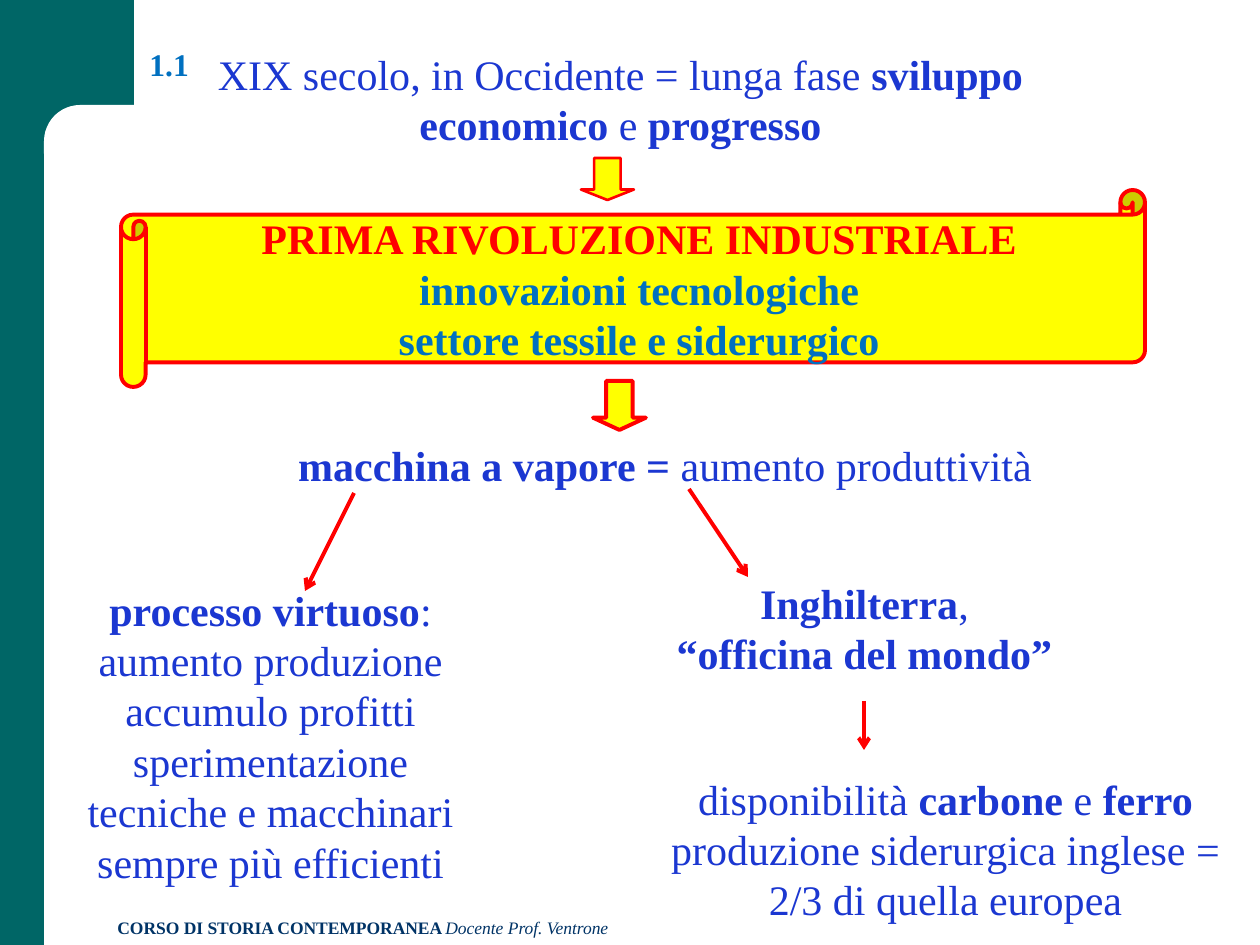
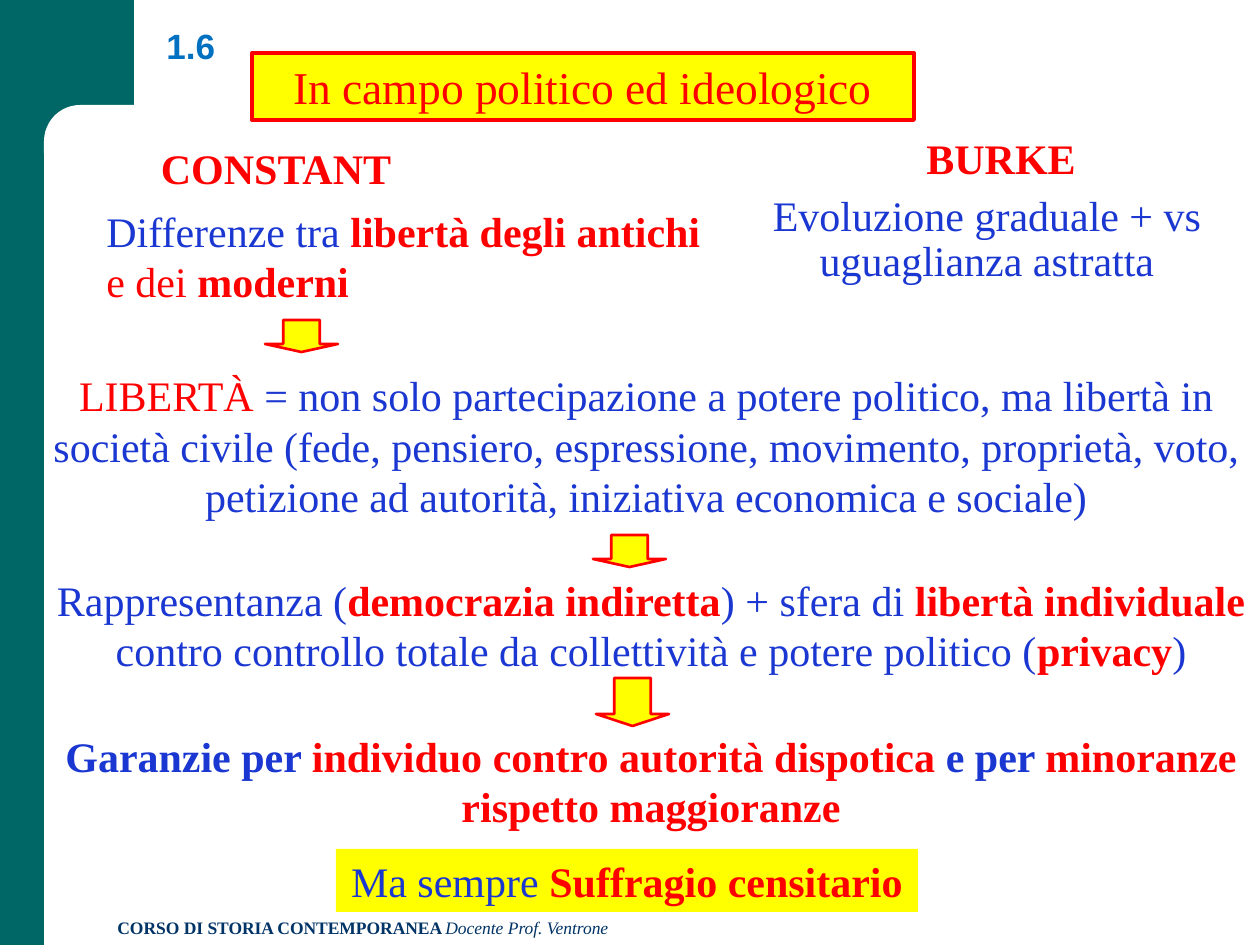
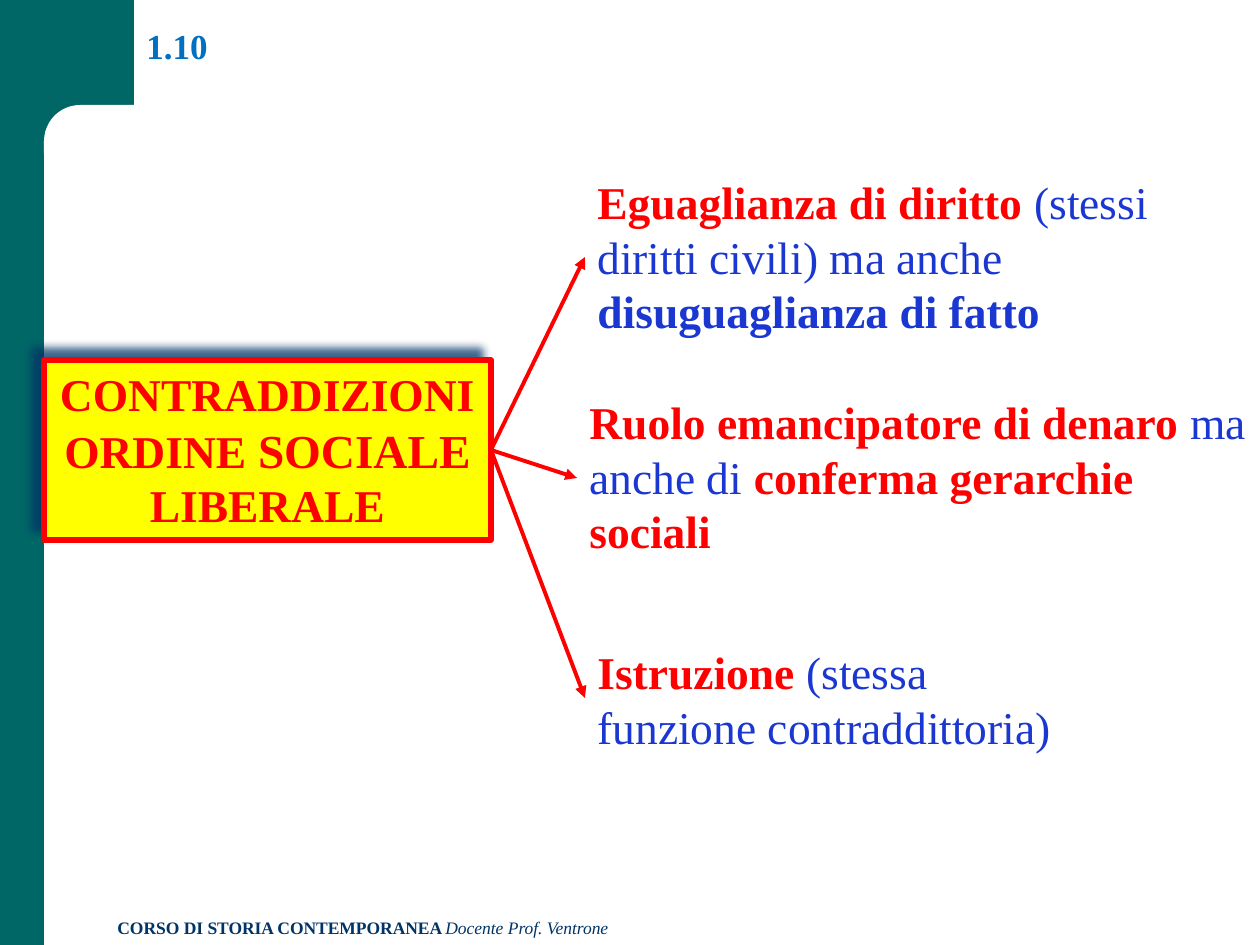
from dataclasses import dataclass

from lxml.etree import SubElement
from pptx import Presentation
from pptx.dml.color import RGBColor as Rgb
from pptx.enum.shapes import MSO_CONNECTOR as Connector, MSO_SHAPE as Shape
from pptx.enum.text import MSO_ANCHOR as Anchor, PP_ALIGN as Align
from pptx.oxml.ns import qn
from pptx.util import Pt

SCALE = 914400 / 126


@dataclass(frozen=True)
class Theme:
    band: Rgb = Rgb(0x00, 0x66, 0x66)
    white: Rgb = Rgb(0xFF, 0xFF, 0xFF)
    navy: Rgb = Rgb(0x00, 0x33, 0x66)
    blue: Rgb = Rgb(0x1B, 0x37, 0xD1)
    sky: Rgb = Rgb(0x00, 0x70, 0xC0)
    red: Rgb = Rgb(0xFF, 0x00, 0x00)
    yellow: Rgb = Rgb(0xFF, 0xFF, 0x00)
    serif: str = "Times New Roman"
    sans: str = "Arial"
    footer: int = 10
    first_number: int = 18
    number: int = 20
    body: int = 24
    large: int = 26
    emphasis: int = 27


T = Theme()


def place(slide, box, paragraphs=(), size=T.body, align=Align.CENTER, anchor=Anchor.TOP,
          kind=None, fill=T.yellow, line=None, width=2.25, face=T.serif, spacing=None):
    area = [round(n * SCALE) for n in box]
    if kind is None:
        shape = slide.shapes.add_textbox(*area)
    else:
        shape = slide.shapes.add_shape(kind, *area)
        shape.shadow.inherit = False
        shape.fill.solid()
        shape.fill.fore_color.rgb = fill
        if line is None:
            shape.line.fill.background()
        else:
            shape.line.color.rgb = line
            shape.line.width = Pt(width)
    frame = shape.text_frame
    frame.word_wrap = True
    frame.vertical_anchor = anchor
    for i, runs in enumerate(paragraphs):
        paragraph = frame.add_paragraph() if i else frame.paragraphs[0]
        paragraph.alignment = align
        if spacing:
            paragraph.line_spacing = spacing
        paragraph.font.name = face
        paragraph.font.size = Pt(size)
        agree = len({run[1:] for run in runs}) == 1
        for text, color, style, *own_size in runs:
            run = paragraph.add_run()
            run.text = text
            font = paragraph.font if agree else run.font
            font.color.rgb = color
            font.bold = "b" in style
            font.italic = "i" in style
            if own_size:
                run.font.size = Pt(own_size[0])
    return shape


def point(slide, start, end, head):
    ends = [round(n * SCALE) for n in (*start, *end)]
    arrow = slide.shapes.add_connector(Connector.STRAIGHT, *ends)
    arrow.line.color.rgb = T.red
    arrow.line.width = Pt(2.25)
    properties = arrow._element.spPr
    SubElement(properties.find(qn("a:ln")), qn("a:tailEnd"), type=head)
    SubElement(properties, qn("a:effectLst"))


deck = Presentation()
deck.slide_width = round(1260 * SCALE)
deck.slide_height = round(945 * SCALE)

slides = []
for number, box, size, face in [
    ("1.1", (137, 39, 79, 50), T.first_number, T.serif),
    ("1.6", (154, 0, 84, 73), T.number, T.sans),
    ("1.10", (134, 0, 110, 73), T.number, T.serif),
]:
    slide = deck.slides.add_slide(deck.slide_layouts[6])
    place(slide, (0, 0, 44, 945), kind=Shape.RECTANGLE, fill=T.band)
    place(slide, (0, 0, 134, 147), kind=Shape.RECTANGLE, fill=T.band)
    corner = place(slide, (44, 105, 764, 84), kind=Shape.ROUNDED_RECTANGLE, fill=T.white)
    corner.adjustments[0] = 0.43
    place(slide, (105, 911, 778, 34), [[
        ("CORSO DI STORIA CONTEMPORANEA ", T.navy, "b"),
        ("Docente Prof. Ventrone", T.navy, "i"),
    ]], T.footer, Align.LEFT)
    place(slide, box, [[(number, T.sky, "b")]], size, Align.LEFT, Anchor.BOTTOM, face=face)
    slides.append(slide)
industry, politics, contradictions = slides

place(industry, (121, 190, 1024, 197), [
    [("PRIMA RIVOLUZIONE INDUSTRIALE", T.red, "b")],
    [("innovazioni tecnologiche", T.sky, "b")],
    [("settore tessile e siderurgico", T.sky, "b")],
], anchor=Anchor.MIDDLE, kind=Shape.HORIZONTAL_SCROLL, line=T.red)

for box, paragraphs in [
    ((197, 42, 847, 115), [[
        ("XIX secolo, in Occidente = lunga fase ", T.blue, ""),
        ("sviluppo economico ", T.blue, "b"),
        ("e ", T.blue, ""),
        ("progresso", T.blue, "b"),
    ]]),
    ((178, 433, 974, 63), [[
        ("macchina a vapore = ", T.blue, "b"),
        ("aumento produttività", T.blue, ""),
    ]]),
    ((54, 578, 433, 318), [
        [("processo virtuoso", T.blue, "b"), (":", T.blue, "")],
        [("aumento produzione accumulo profitti sperimentazione "
          "tecniche e macchinari sempre più efficienti", T.blue, "")],
    ]),
    ((663, 571, 403, 115), [
        [("Inghilterra", T.blue, "b"), (",", T.blue, "")],
        [("“officina del mondo”", T.blue, "b")],
    ]),
    ((655, 767, 581, 165), [
        [("disponibilità ", T.blue, ""), ("carbone", T.blue, "b"),
         (" e ", T.blue, ""), ("ferro", T.blue, "b")],
        [("produzione siderurgica inglese = 2/3 di quella europea", T.blue, "")],
    ]),
]:
    place(industry, box, paragraphs)

for start, end in [
    ((354, 493), (305, 591)),
    ((689, 489), (748, 577)),
    ((864, 701), (864, 750)),
]:
    point(industry, start, end, "arrow")

for slide, box, width in [
    (industry, (581, 158, 53, 42), 1.5),
    (industry, (593, 381, 53, 49), 2.25),
    (politics, (265, 320, 73, 32), 1.5),
    (politics, (593, 535, 73, 32), 1.5),
    (politics, (596, 678, 73, 48), 1.5),
]:
    step = place(slide, box, kind=Shape.DOWN_ARROW, line=T.red, width=width)
    step.adjustments[1] = 0.25

place(politics, (252, 53, 662, 67), [[("In campo politico ed ideologico", T.red, "")]],
      T.large, kind=Shape.RECTANGLE, line=T.red)
place(politics, (147, 136, 258, 63), [[("CONSTANT", T.red, "b")]])
place(politics, (94, 199, 620, 115), [[
    ("Differenze tra ", T.blue, ""),
    ("libertà degli antichi ", T.red, "b"),
    ("e dei ", T.red, ""),
    ("moderni", T.red, "b"),
]], align=Align.LEFT)
place(politics, (914, 126, 199, 63), [[("BURKE", T.red, "b")]], align=Align.LEFT)
place(politics, (714, 189, 546, 105),
      [[("Evoluzione graduale + vs uguaglianza astratta", T.blue, "")]], spacing=0.9)

for box, runs in [
    ((32, 363, 1229, 165), [
        ("LIBERTÀ ", T.red, ""),
        ("= non solo partecipazione a potere politico, ma libertà in società civile "
         "(fede, pensiero, espressione, movimento, proprietà, voto, petizione ad autorità, "
         "iniziativa economica e sociale)", T.blue, ""),
    ]),
    ((42, 567, 1218, 115), [
        ("Rappresentanza (", T.blue, ""),
        ("democrazia indiretta", T.red, "b"),
        (") + sfera di ", T.blue, ""),
        ("libertà individuale ", T.red, "b"),
        ("contro controllo totale da collettività e potere politico (", T.blue, ""),
        ("privacy", T.red, "b"),
        (")", T.blue, ""),
    ]),
    ((42, 723, 1218, 115), [
        ("Garanzie per ", T.blue, "b"),
        ("individuo contro autorità dispotica ", T.red, "b"),
        ("e per ", T.blue, "b"),
        ("minoranze rispetto maggioranze", T.red, "b"),
    ]),
]:
    place(politics, box, [runs], anchor=Anchor.MIDDLE)

place(politics, (336, 849, 582, 63), [[
    ("Ma sempre ", T.blue, ""),
    ("Suffragio censitario", T.red, "b"),
]], anchor=Anchor.MIDDLE, kind=Shape.RECTANGLE)

order = place(contradictions, (44, 360, 447, 180), [[
    ("CONTRADDIZIONI ORDINE ", T.red, "b"),
    ("SOCIALE", T.red, "b", T.emphasis),
    (" LIBERALE", T.red, "b"),
]], T.large, kind=Shape.RECTANGLE, line=T.red, width=3)
effects = order._element.spPr.find(qn("a:effectLst"))
shadow = SubElement(effects, qn("a:outerShdw"), blurRad=str(Pt(5)), dist=str(Pt(8.5)),
                    dir=str(225 * 60000), algn="ctr", rotWithShape="0")
shade = SubElement(shadow, qn("a:srgbClr"), val=str(T.navy))
SubElement(shade, qn("a:alpha"), val="75000")

for box, tip, runs in [
    ((585, 168, 675, 178), (585, 257), [
        ("Eguaglianza di diritto ", T.red, "b"),
        ("(stessi diritti civili) ma anche ", T.blue, ""),
        ("disuguaglianza di fatto", T.blue, "b"),
    ]),
    ((577, 388, 683, 178), (577, 478), [
        ("Ruolo emancipatore di denaro ", T.red, "b"),
        ("ma anche di ", T.blue, ""),
        ("conferma gerarchie sociali", T.red, "b"),
    ]),
    ((585, 638, 507, 122), (585, 698), [
        ("Istruzione ", T.red, "b"),
        ("(stessa funzione contraddittoria)", T.blue, ""),
    ]),
]:
    place(contradictions, box, [runs], T.large, Align.LEFT)
    point(contradictions, (491, 450), tip, "triangle")

deck.save("out.pptx")
